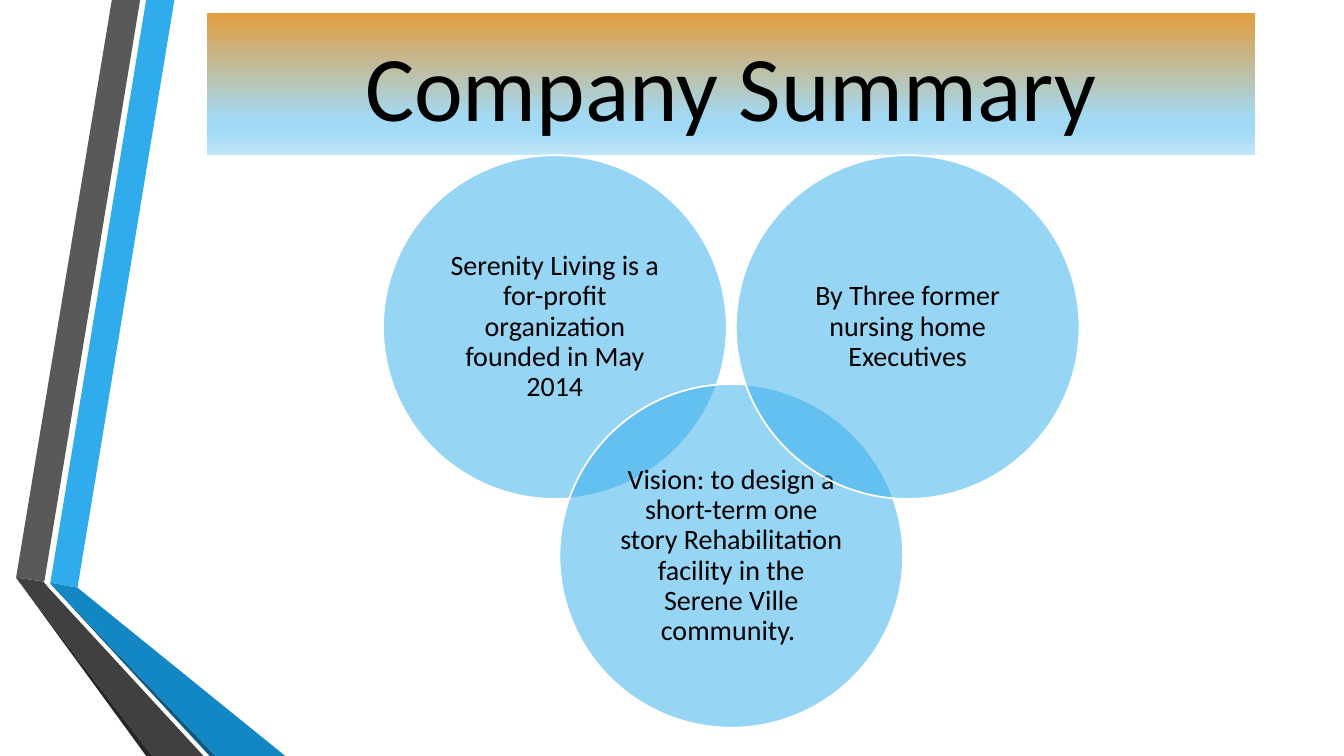
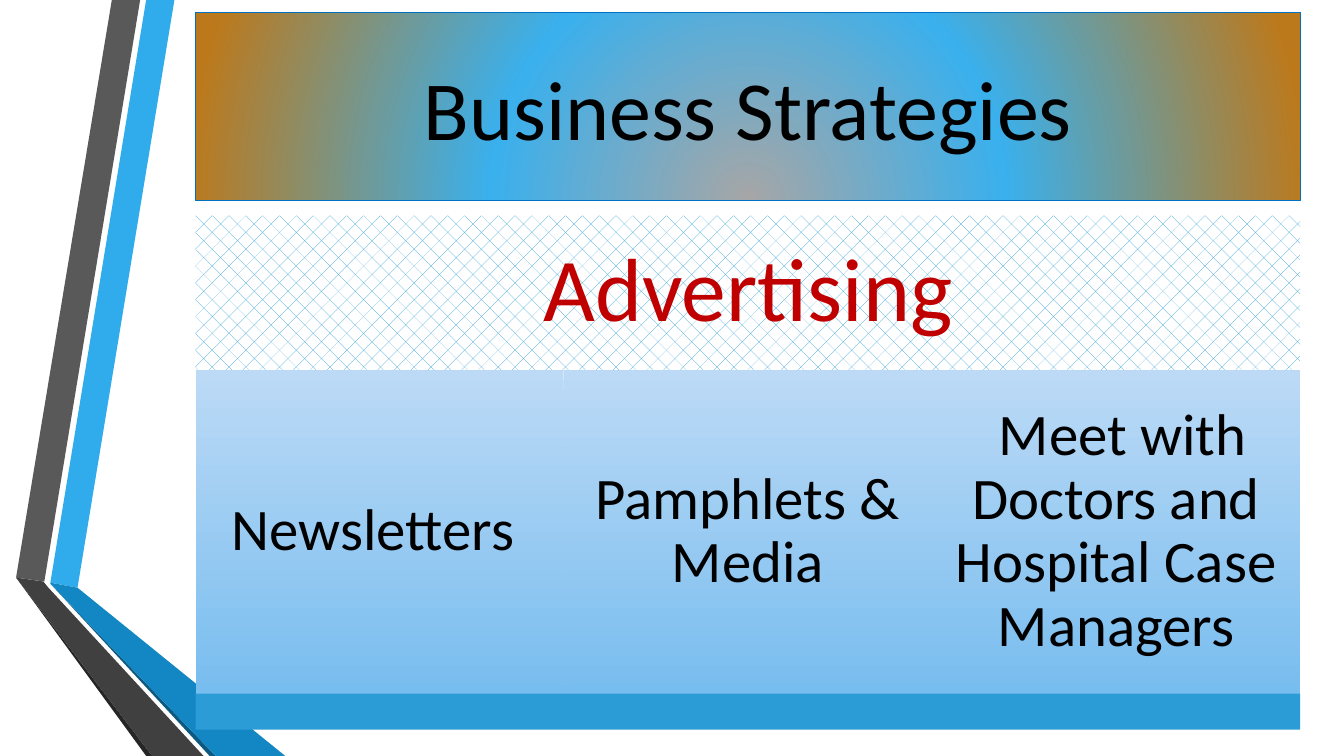
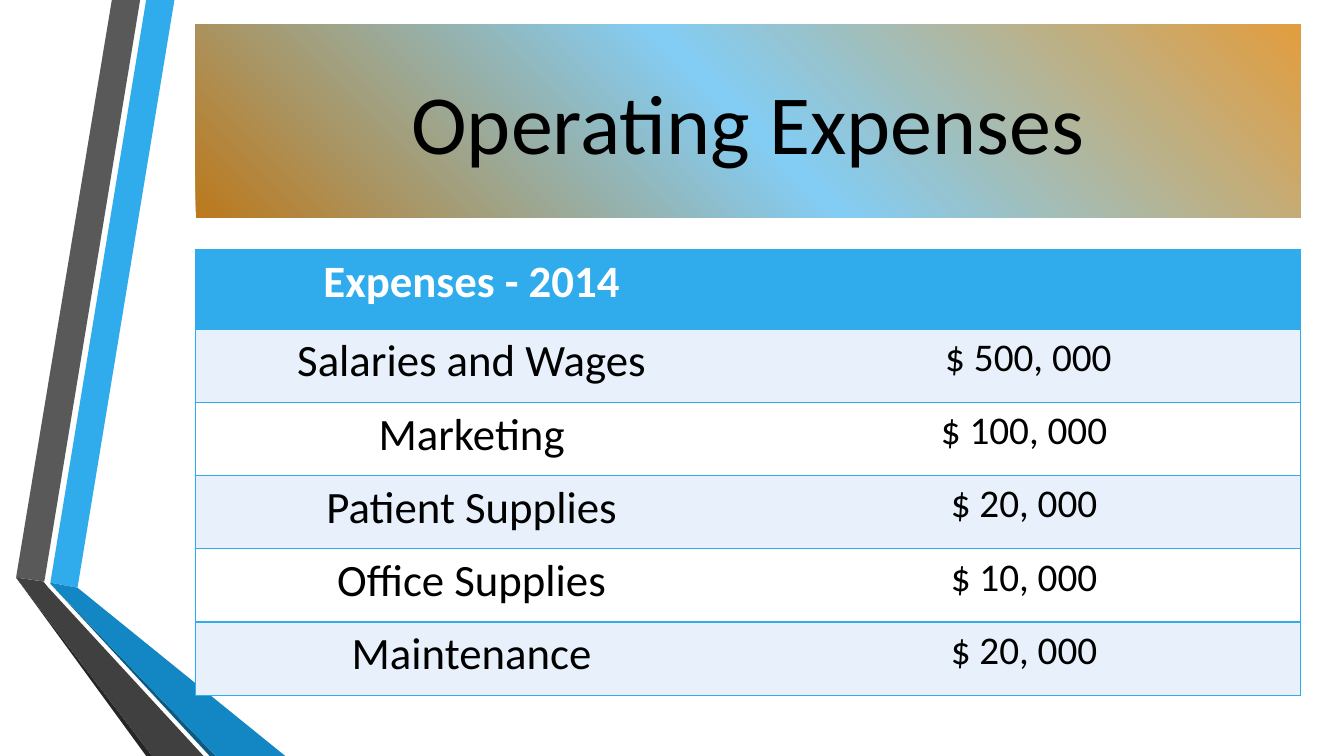
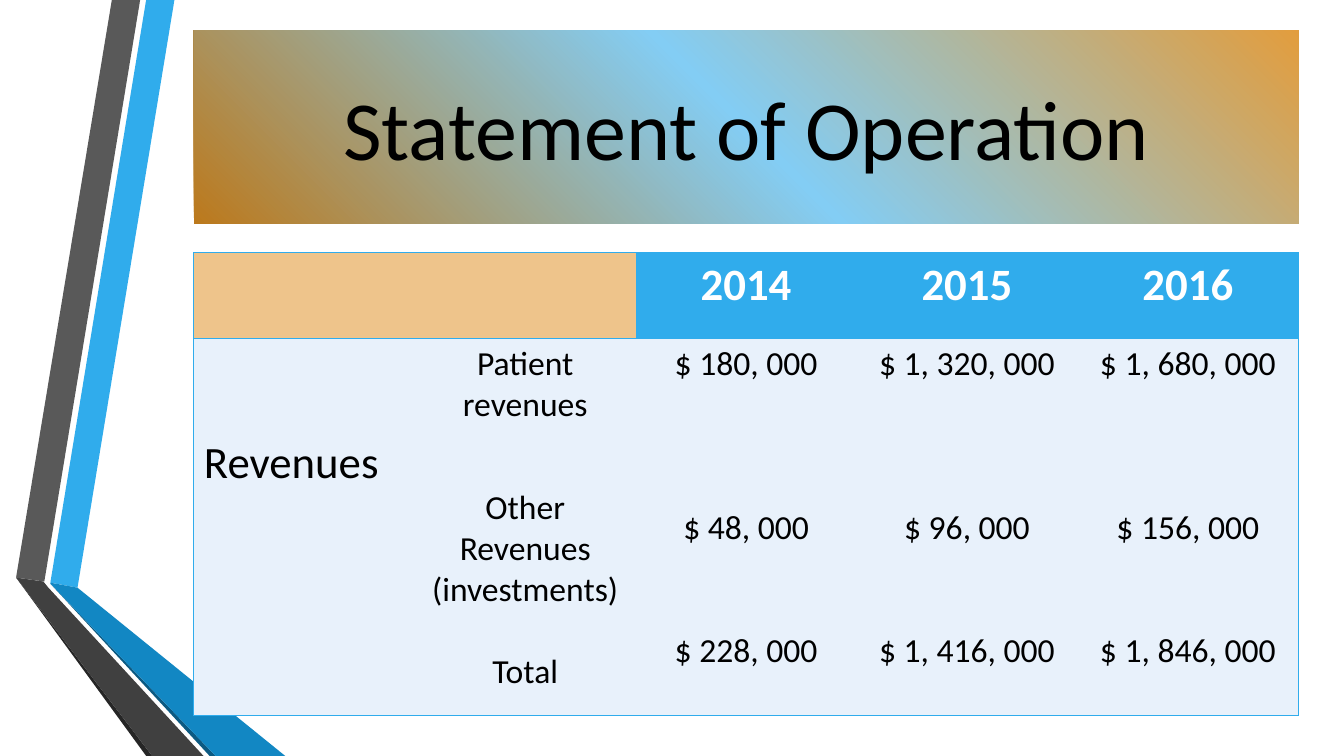
from lxml import etree
from pptx import Presentation
from pptx.dml.color import RGBColor
from pptx.enum.dml import MSO_PATTERN
from pptx.enum.shapes import MSO_SHAPE
from pptx.enum.text import MSO_ANCHOR, PP_ALIGN
from pptx.oxml.ns import qn
from pptx.util import Pt

RECT, OVAL = MSO_SHAPE.RECTANGLE, MSO_SHAPE.OVAL
TOP, MIDDLE = MSO_ANCHOR.TOP, MSO_ANCHOR.MIDDLE
LEFT, CENTER = PP_ALIGN.LEFT, PP_ALIGN.CENTER
DIAMONDS = MSO_PATTERN.DOTTED_DIAMOND

FONT = "Calibri"
BLACK = RGBColor(0x00, 0x00, 0x00)
WHITE = RGBColor(0xFF, 0xFF, 0xFF)
RED = RGBColor(0xC0, 0x00, 0x00)
BLUE = RGBColor(0x30, 0xAC, 0xEC)
STRONG_BLUE = RGBColor(0x12, 0x87, 0xC3)
DEEP_BLUE = RGBColor(0x0C, 0x5A, 0x82)
BAR_BLUE = RGBColor(0x2C, 0x9C, 0xD6)
LINE_BLUE = RGBColor(0x00, 0x70, 0xC0)
PALE_BLUE = RGBColor(0xE8, 0xF1, 0xFB)
SKY = RGBColor(0x83, 0xCD, 0xF4)
LIGHT_SKY = RGBColor(0xA2, 0xDA, 0xF6)
FAINT_SKY = RGBColor(0xC1, 0xE6, 0xF9)
RADIAL_BLUE = RGBColor(0x3A, 0xB0, 0xED)
PANEL_TOP = RGBColor(0xBC, 0xDA, 0xF6)
PANEL_BOTTOM = RGBColor(0x78, 0xBD, 0xEF)
ORANGE = RGBColor(0xE2, 0x9D, 0x3E)
BROWN = RGBColor(0xBC, 0x79, 0x1C)
SAND = RGBColor(0xEE, 0xC4, 0x8B)
SILVER = RGBColor(0xA6, 0xA6, 0xA6)
GREY = RGBColor(0x59, 0x59, 0x59)
DARK_GREY = RGBColor(0x40, 0x40, 0x40)
NEAR_BLACK = RGBColor(0x26, 0x26, 0x26)

# Content
RIBBONS = [
    (BLUE, [(36, 416.2), (55.4, 419.8), (124.6, 0), (104.4, 0)]),
    (GREY, [(100.1, 0), (79.9, 0), (11.5, 412.6), (31.7, 415.4)]),
    (NEAR_BLACK, [(11.5, 412.6), (104.4, 540), (108.7, 540)]),
    (DEEP_BLUE, [(36, 416.9), (149.8, 540), (154.1, 540)]),
    (STRONG_BLUE, [(36, 416.9), (154.1, 540), (203.8, 540), (55.4, 419.8), (36, 416.2)]),
    (DARK_GREY, [(145.4, 540), (34.6, 419.8), (31, 415.4), (11.5, 412.6), (108.7, 540)]),
]
SUMMARY = [  # text, top of circle
    ("Serenity Living is a for-profit organization founded in May 2014", 110.9),
    ("Vision: to design a short-term one story Rehabilitation facility in the "
     "Serene Ville community. ", 274.3),
    ("By Three former nursing home Executives", 110.9),
]
ADVERTISING = ["Newsletters ", "Pamphlets & Media",
               " Meet with Doctors and Hospital Case Managers"]
EXPENSES = [
    ("Salaries and Wages", " $ 500, 000"),
    ("Marketing", "$ 100, 000"),
    ("Patient Supplies", "$ 20, 000"),
    ("Office Supplies", "$ 10, 000"),
    ("Maintenance", "$ 20, 000"),
]
REVENUE_LABELS = ["Patient revenues", "Other Revenues (investments)", "Total"]
REVENUES = {
    "2014": ["$ 180, 000", "$ 48, 000", "$ 228, 000"],
    "2015": ["$ 1, 320, 000", "$ 96, 000", "$ 1, 416, 000"],
    "2016": ["$ 1, 680, 000", "$ 156, 000", "$ 1, 846, 000"],
}

# Shared measures
MAIN_X, MAIN_W = 139.7, 789
DIAGONAL = dict(stops=[(0, BROWN), (50, SKY), (100, ORANGE)], angle=315)
NO_STYLE = "{2D5ABB26-0587-4C30-8999-92F81FD0307C}"


def put_text(tf, paras, size, color=BLACK, bold=False, align=CENTER, gaps=(), spacing=None):
    """Write paragraphs; gaps holds the space before each one after the first."""
    tf.word_wrap = True
    for i, text in enumerate(paras):
        p = tf.add_paragraph() if i else tf.paragraphs[0]
        p.alignment = align
        if spacing:
            p.line_spacing = spacing
        if i and gaps:
            p.space_before = Pt(gaps[i - 1])
        r = p.add_run()
        r.text = text
        r.font.name, r.font.size, r.font.bold = FONT, Pt(size), bold
        r.font.color.rgb = color


def add_box(s, kind, x, y, w, h, fill=None, line=None, line_w=0.75, inset=None):
    sp = s.shapes.add_shape(kind, Pt(x), Pt(y), Pt(w), Pt(h))
    sp.shadow.inherit = False
    if fill is not None:
        sp.fill.solid()
        sp.fill.fore_color.rgb = fill
    if line is None:
        sp.line.fill.background()
    else:
        sp.line.color.rgb = line
        sp.line.width = Pt(line_w)
    tf = sp.text_frame
    tf.vertical_anchor = MIDDLE
    if inset is not None:
        tf.margin_left = tf.margin_right = tf.margin_top = tf.margin_bottom = Pt(inset)
    return sp


def set_gradient(sp, stops, angle=None, focus=None):
    """Linear gradient at an angle, or circular around a focus (l, t, r, b in percent)."""
    sp.fill.gradient()
    grad = sp._element.spPr.find(qn("a:gradFill"))
    for child in list(grad):
        grad.remove(child)
    stop_list = etree.SubElement(grad, qn("a:gsLst"))
    for pos, color in stops:
        stop = etree.SubElement(stop_list, qn("a:gs"), pos=str(pos * 1000))
        etree.SubElement(stop, qn("a:srgbClr"), val=str(color))
    if focus:
        circle = etree.SubElement(grad, qn("a:path"), {"path": "circle"})
        sides = {side: str(v * 1000) for side, v in zip("ltrb", focus)}
        etree.SubElement(circle, qn("a:fillToRect"), sides)
    else:
        etree.SubElement(grad, qn("a:lin"), ang=str(angle * 60000), scaled="0")


def set_alpha(sp, percent):
    color = sp._element.spPr.find(qn("a:solidFill"))[0]
    etree.SubElement(color, qn("a:alpha"), val=str(percent * 1000))


def add_title(s, text, x, y, w, h, size=60, line=None, **gradient):
    sp = add_box(s, RECT, x, y, w, h, line=line)
    set_gradient(sp, **gradient)
    put_text(sp.text_frame, [text], size)


def add_ribbons(s, layout):
    """Draw the folded ribbons and place them on the layout all slides use."""
    for color, points in RIBBONS:
        outline = [(Pt(x), Pt(y)) for x, y in points]
        builder = s.shapes.build_freeform(*outline[0], scale=1.0)
        builder.add_line_segments(outline[1:], close=True)
        sp = builder.convert_to_shape()
        sp.shadow.inherit = False
        sp.fill.solid()
        sp.fill.fore_color.rgb = color
        sp.line.fill.background()
        layout.shapes._spTree.append(sp._element)


def add_grid(s, x, y, col_widths, row_heights):
    """Unstyled table with blue rules around it and between its rows."""
    rows, cols = len(row_heights), len(col_widths)
    frame = s.shapes.add_table(rows, cols, Pt(x), Pt(y), Pt(sum(col_widths)), Pt(sum(row_heights)))
    table = frame.table
    table._tbl.tblPr.find(qn("a:tableStyleId")).text = NO_STYLE
    for col, width in zip(table.columns, col_widths):
        col.width = Pt(width)
    for row, height in zip(table.rows, row_heights):
        row.height = Pt(height)
    for r in range(rows):
        for c in range(cols):
            sides = ["L"] * (c == 0) + ["R"] * (c == cols - 1) + ["T", "B"]
            tc_pr = table.cell(r, c)._tc.get_or_add_tcPr()
            for side in sides:
                ln = etree.SubElement(tc_pr, qn("a:ln" + side), w=str(Pt(1)))
                fill = etree.SubElement(ln, qn("a:solidFill"))
                etree.SubElement(fill, qn("a:srgbClr"), val=str(BLUE))
    return table


def fill_cell(cell, fill, paras=(), size=32, margin_top=3.6, **fmt):
    cell.fill.solid()
    cell.fill.fore_color.rgb = fill
    cell.vertical_anchor = TOP
    cell.margin_top = Pt(margin_top)
    if paras:
        put_text(cell.text_frame, paras, size, **fmt)


def summary_slide(s):
    add_title(s, "Company Summary", 147.6, 9.4, 748.8, 101.5, size=66, angle=90,
              stops=[(0, ORANGE), (74, LIGHT_SKY), (83, LIGHT_SKY), (100, FAINT_SKY)])
    for i, (text, top) in enumerate(SUMMARY):
        sp = add_box(s, OVAL, 273.6 + 126 * i, top, 245.5, 245.5, BLUE, WHITE, 1.25, inset=6)
        set_alpha(sp, 50)
        put_text(sp.text_frame, [text], 20, spacing=0.9)


def strategies_slide(s):
    add_title(s, "Business Strategies", MAIN_X, 9.2, MAIN_W, 133.7, line=LINE_BLUE,
              stops=[(0, SILVER), (46, RADIAL_BLUE), (100, BROWN)], focus=(50, 130, 50, -30))
    # Heading band
    band = add_box(s, RECT, MAIN_X, 154.1, MAIN_W, 110.2, inset=19.4)
    band.fill.patterned()
    band.fill.pattern = DIAMONDS
    band.fill.fore_color.rgb = BAR_BLUE
    band.fill.back_color.rgb = WHITE
    put_text(band.text_frame, ["Advertising"], 64, color=RED, spacing=0.9)
    # Panels
    panel_w = MAIN_W / len(ADVERTISING)
    for i, text in enumerate(ADVERTISING):
        sp = add_box(s, RECT, MAIN_X + i * panel_w, 264.3, panel_w, 231.1, inset=12.2)
        set_gradient(sp, [(0, PANEL_TOP), (100, PANEL_BOTTOM)], angle=90)
        put_text(sp.text_frame, [text], 42, spacing=0.9)
    # Base bar
    add_box(s, RECT, MAIN_X, 495.4, MAIN_W, 25.7, BAR_BLUE)


def expenses_slide(s):
    add_title(s, "Operating Expenses", MAIN_X, 17.3, MAIN_W, 138.2, **DIAGONAL)
    table = add_grid(s, MAIN_X, 178.5, [MAIN_W / 2] * 2, [56.6] + [52.3] * len(EXPENSES))
    fill_cell(table.cell(0, 0), BLUE, ["Expenses - 2014"], color=WHITE, bold=True)
    fill_cell(table.cell(0, 1), BLUE)
    for r, (item, amount) in enumerate(EXPENSES, 1):
        fill = PALE_BLUE if r % 2 else WHITE
        fill_cell(table.cell(r, 0), fill, [item])
        fill_cell(table.cell(r, 1), fill, [amount], size=28)


def operation_slide(s):
    x = MAIN_X - 1.2
    add_title(s, "Statement of Operation", x, 21.6, MAIN_W, 138.2, **DIAGONAL)
    table = add_grid(s, x, 180.6, [MAIN_W / 5] * 5, [61.2, 269.3])
    table.cell(0, 0).merge(table.cell(0, 1))
    fill_cell(table.cell(0, 0), SAND)
    fill_cell(table.cell(1, 0), PALE_BLUE, ["Revenues"], align=LEFT, margin_top=69.5)
    fill_cell(table.cell(1, 1), PALE_BLUE, REVENUE_LABELS, size=24, gaps=(44, 29.3))
    for c, (year, amounts) in enumerate(REVENUES.items(), 2):
        fill_cell(table.cell(0, c), BLUE, [year], color=WHITE, bold=True)
        fill_cell(table.cell(1, c), PALE_BLUE, amounts, size=24, gaps=(87.9, 58.6))


def main():
    prs = Presentation()
    prs.slide_width, prs.slide_height = Pt(960), Pt(540)
    blank = prs.slide_layouts[6]
    for i, build in enumerate([summary_slide, strategies_slide, expenses_slide, operation_slide]):
        s = prs.slides.add_slide(blank)
        if i == 0:
            add_ribbons(s, blank)
        build(s)
    prs.save("out.pptx")


if __name__ == "__main__":
    main()
